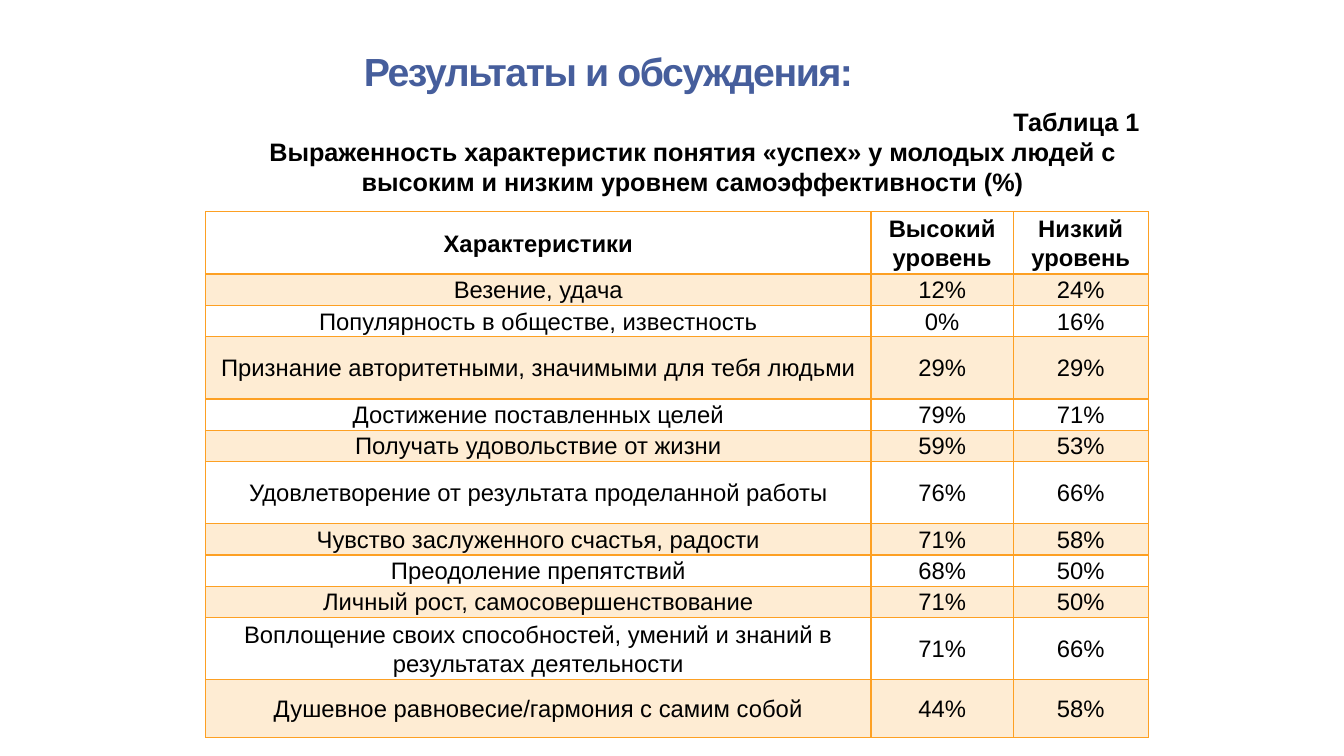
from dataclasses import dataclass
from lxml.etree import SubElement
from pptx import Presentation
from pptx.dml.color import RGBColor
from pptx.enum.text import MSO_ANCHOR as Anchor, MSO_AUTO_SIZE as AutoSize, PP_ALIGN as Align
from pptx.oxml import parse_xml
from pptx.oxml.ns import nsdecls, qn
from pptx.util import Inches, Pt


@dataclass(frozen=True)
class Theme:
    """Colours, type sizes and line widths of the slide."""
    font: str = "Arial"
    ink: str = "000000"
    heading: str = "465E9C"
    accent: str = "FDA023"
    band_opacity: int = 20
    title_size: int = 28
    caption_size: int = 18
    table_size: int = 17
    thin: int = 1
    thick: int = 2
    line_spacing: float = 1.07


class SlideBuilder:
    """Adds styled elements, placed in percent of the slide's size."""

    def __init__(self, presentation, theme):
        """Starts a title-only slide."""
        self.theme = theme
        self.width = presentation.slide_width
        self.height = presentation.slide_height
        self.slide = presentation.slides.add_slide(presentation.slide_layouts[5])

    def across(self, share):
        """Turns a percentage of the width into a length."""
        return round(self.width * share / 100)

    def down(self, share):
        """Turns a percentage of the height into a length."""
        return round(self.height * share / 100)

    def area(self, left, top, width, height):
        """Returns a rectangle as lengths."""
        return self.across(left), self.down(top), self.across(width), self.down(height)

    def format(self, paragraph, align, size, color, bold=True):
        """Aligns a paragraph and styles its runs."""
        paragraph.alignment = align
        for run in paragraph.runs:
            run.font.name = self.theme.font
            run.font.size = Pt(size)
            run.font.bold = bold
            run.font.color.rgb = RGBColor.from_string(color)

    def title(self, text, place):
        """Moves and fills the title placeholder."""
        shape = self.slide.shapes.title
        shape.left, shape.top, shape.width, shape.height = self.area(*place)
        frame = shape.text_frame
        frame.text = text
        frame.word_wrap = True
        frame.auto_size = AutoSize.NONE
        frame.vertical_anchor = Anchor.MIDDLE
        paragraph = frame.paragraphs[0]
        self.format(paragraph, Align.RIGHT, self.theme.title_size, self.theme.heading)
        paragraph.runs[0].font._element.set("spc", "-100")

    def caption(self, lines, place):
        """Adds a bold text box from pairs of text and alignment."""
        frame = self.slide.shapes.add_textbox(*self.area(*place)).text_frame
        frame.word_wrap = True
        frame.vertical_anchor = Anchor.MIDDLE
        frame.text = "\n".join(text for text, _ in lines)
        for paragraph, (_, align) in zip(frame.paragraphs, lines):
            self.format(paragraph, align, self.theme.caption_size, self.theme.ink)

    def table(self, rows, left, top, column_shares, row_shares):
        """Adds a banded table with a bold header row."""
        place = self.area(left, top, sum(column_shares), sum(row_shares))
        table = self.slide.shapes.add_table(len(rows), len(column_shares), *place).table
        table.first_row = table.horz_banding = False
        for column, share in zip(table.columns, column_shares):
            column.width = self.across(share)
        for index, (row, share, values) in enumerate(zip(table.rows, row_shares, rows)):
            row.height = self.down(share)
            for cell, value in zip(row.cells, values):
                self.cell(cell, value, index)

    def cell(self, cell, value, row_index):
        """Fills one table cell and draws its borders."""
        theme = self.theme
        cell.text = value
        cell.vertical_anchor = Anchor.MIDDLE
        cell.margin_left = cell.margin_right = Inches(0.07)
        cell.margin_top = cell.margin_bottom = 0
        paragraph = cell.text_frame.paragraphs[0]
        paragraph.line_spacing = theme.line_spacing
        self.format(paragraph, Align.CENTER, theme.table_size, theme.ink, row_index == 0)
        properties = cell._tc.get_or_add_tcPr()
        if row_index % 2:
            cell.fill.solid()
            cell.fill.fore_color.rgb = RGBColor.from_string(theme.accent)
            color = properties.find(".//" + qn("a:srgbClr"))
            SubElement(color, qn("a:alpha"), val=str(theme.band_opacity * 1000))
        else:
            cell.fill.background()
        widths = {"L": theme.thin, "R": theme.thin,
                  "T": theme.thick if row_index == 1 else theme.thin,
                  "B": theme.thick if row_index == 0 else theme.thin}
        for position, (side, width) in enumerate(widths.items()):
            properties.insert(position, parse_xml(
                f'<a:ln{side} {nsdecls("a")} w="{Pt(width)}"><a:solidFill>'
                f'<a:srgbClr val="{theme.accent}"/></a:solidFill></a:ln{side}>'))


RESULTS = [
    ("Характеристики", "Высокий уровень", "Низкий уровень"),
    ("Везение, удача", "12%", "24%"),
    ("Популярность в обществе, известность", "0%", "16%"),
    ("Признание авторитетными, значимыми для тебя людьми", "29%", "29%"),
    ("Достижение поставленных целей", "79%", "71%"),
    ("Получать удовольствие от жизни", "59%", "53%"),
    ("Удовлетворение от результата проделанной работы", "76%", "66%"),
    ("Чувство заслуженного счастья, радости", "71%", "58%"),
    ("Преодоление препятствий", "68%", "50%"),
    ("Личный рост, самосовершенствование", "71%", "50%"),
    ("Воплощение своих способностей, умений и знаний в результатах деятельности",
     "71%", "66%"),
    ("Душевное равновесие/гармония с самим собой", "44%", "58%"),
]
SINGLE = 4.13
DOUBLE = 2 * SINGLE
LAST = 7.6
ROW_SHARES = [DOUBLE, SINGLE, SINGLE, DOUBLE, SINGLE, SINGLE,
              DOUBLE, SINGLE, SINGLE, SINGLE, DOUBLE, LAST]


def main():
    """Builds and saves the results slide."""
    presentation = Presentation()
    presentation.slide_width = Inches(13.33)
    presentation.slide_height = Inches(7.5)
    builder = SlideBuilder(presentation, Theme())
    builder.caption([
        ("Таблица 1", Align.RIGHT),
        ("Выраженность характеристик понятия «успех» у молодых людей с "
         "высоким и низким уровнем самоэффективности (%)", Align.CENTER),
    ], (17.55, 13.33, 67.97, 13.47))
    builder.table(RESULTS, 15.3, 28, [49.51, 10.58, 10.05], ROW_SHARES)
    builder.title("Результаты и обсуждения:", (14.48, 5.87, 49.74, 6.93))
    presentation.save("out.pptx")


if __name__ == "__main__":
    main()
